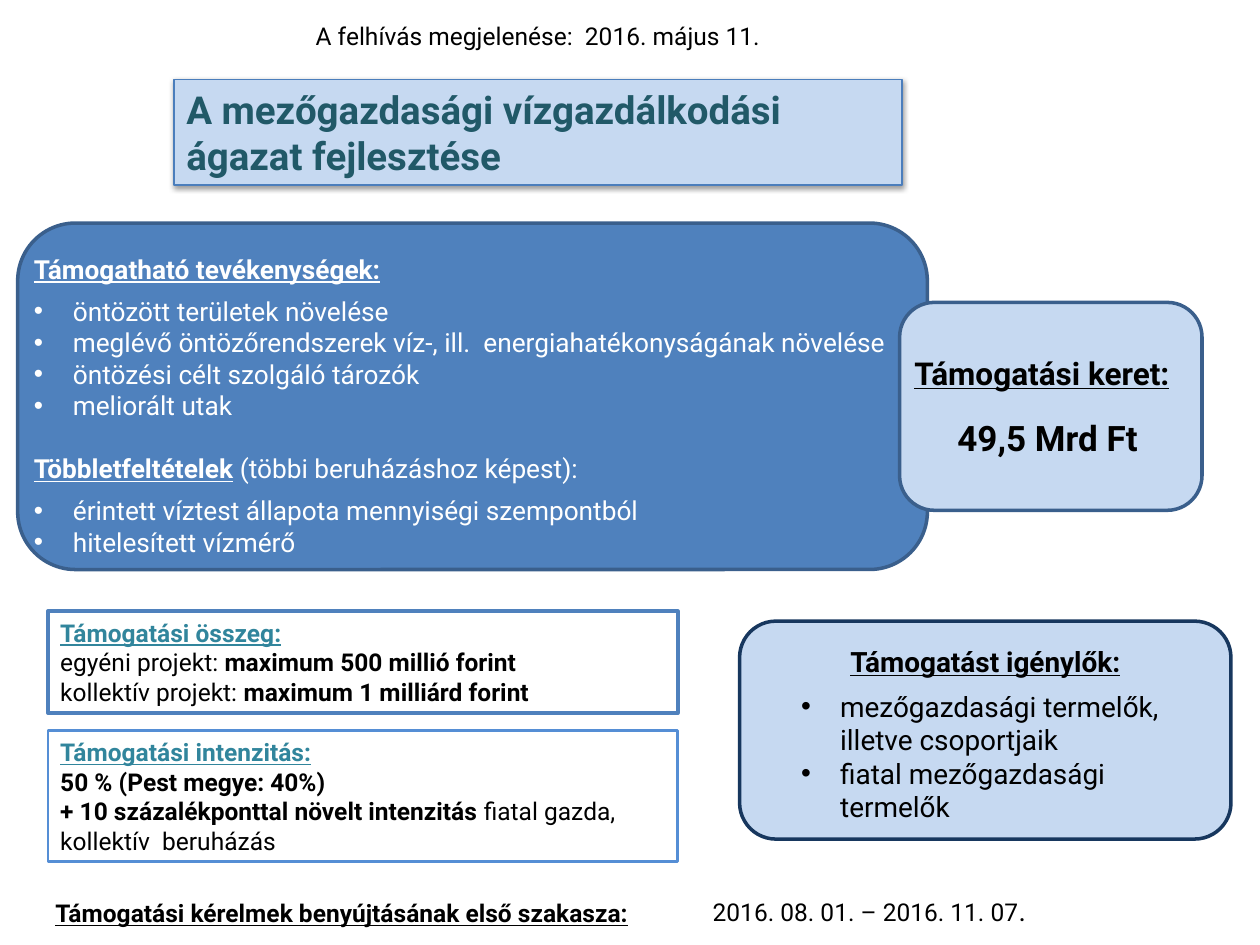
import pptx
import pptx.dml.color
import pptx.enum.shapes
import pptx.enum.text
import pptx.oxml
import pptx.oxml.ns
import pptx.util
from pptx.util import Inches

ALIGN = pptx.enum.text.PP_ALIGN
SHAPE = pptx.enum.shapes.MSO_SHAPE
FONT = "Roboto"
BLACK, WHITE = "000000", "FFFFFF"
BLUE, PALE, TEAL, EDGE = "4F81BD", "C6D9F1", "31859C", "3A5F8C"
HEADING, BOLD, PLAIN = "bu", "b", ""  # b = bold, u = underlined


def rgb(value):
    return pptx.dml.color.RGBColor.from_string(value)


def add_xml(parent, tag, attributes, content=""):
    namespace = pptx.oxml.ns.nsdecls("a")
    parent.append(pptx.oxml.parse_xml(
        f"<a:{tag} {namespace} {attributes}>{content}</a:{tag}>"))


def para(*spans, bullet=False, before=0, align=ALIGN.LEFT, spacing=None):
    """Describe a paragraph; each span is (text, style) or (text, style, colour)."""
    return dict(spans=spans, bullet=bullet, before=before, align=align, spacing=spacing)


def bullets(*lines, align=ALIGN.LEFT):
    return [para((line, PLAIN), bullet=True, before=0 if i else 6, align=align)
            for i, line in enumerate(lines)]


def write(box, paras, size, color=BLACK, wrap=True):
    frame = box.text_frame
    frame.word_wrap = wrap
    frame.auto_size = pptx.enum.text.MSO_AUTO_SIZE.SHAPE_TO_FIT_TEXT
    for i, item in enumerate(paras):
        paragraph = frame.add_paragraph() if i else frame.paragraphs[0]
        if item["bullet"]:
            properties = paragraph._p.get_or_add_pPr()
            properties.set("marL", str(Inches(0.31)))
            properties.set("indent", str(-Inches(0.31)))
            add_xml(properties, "buFont", 'typeface="Arial"')
            add_xml(properties, "buChar", 'char="•"')
        paragraph.alignment = item["align"]
        if item["before"]:
            paragraph.space_before = pptx.util.Pt(item["before"])
        if item["spacing"]:
            paragraph.line_spacing = item["spacing"]
        for text, style, *own_color in item["spans"]:
            span = paragraph.add_run()
            span.text = text
            span.font.name = FONT
            span.font.size = pptx.util.Pt(size)
            span.font.bold = "b" in style
            span.font.underline = "u" in style
            span.font.color.rgb = rgb(own_color[0] if own_color else color)


def add_text(page, at, paras, size, color=BLACK, wrap=True):
    box = page.shapes.add_textbox(*map(Inches, at))
    write(box, paras, size, color, wrap)
    return box


def add_panel(page, kind, at, fill, line, width=2):
    panel = page.shapes.add_shape(kind, *map(Inches, at))
    panel.shadow.inherit = False
    if fill:
        panel.fill.solid()
        panel.fill.fore_color.rgb = rgb(fill)
    else:
        panel.fill.background()
    panel.line.color.rgb = rgb(line)
    panel.line.width = pptx.util.Pt(width)
    return panel


def add_title(page):
    title = add_panel(page, SHAPE.RECTANGLE, (1.38, 0.63, 5.78, 0.84), PALE, "4B7EBC", 0.75)
    effects = title._element.spPr.find(pptx.oxml.ns.qn("a:effectLst"))
    add_xml(effects, "outerShdw",
            f'blurRad="{pptx.util.Pt(3.1)}" dist="{pptx.util.Pt(1.6)}" '
            'dir="5400000" rotWithShape="0"',
            '<a:srgbClr val="000000"><a:alpha val="38000"/></a:srgbClr>')
    write(title, [para(("A mezőgazdasági vízgazdálkodási ágazat fejlesztése", BOLD))],
          22, "215968")


def add_activities(page):
    add_panel(page, SHAPE.ROUNDED_RECTANGLE, (0.14, 1.77, 7.22, 2.75), BLUE, EDGE)
    justify = ALIGN.JUSTIFY
    add_text(page, (0.17, 1.96, 7.19, 2.54), [
        para(("Támogatható tevékenységek:", HEADING), align=justify),
        *bullets("öntözött területek növelése",
                 "meglévő öntözőrendszerek víz-, ill.  energiahatékonyságának növelése",
                 "öntözési célt szolgáló tározók",
                 "meliorált utak"),
        para(("Többletfeltételek", HEADING), (" (többi beruházáshoz képest):", PLAIN),
             before=18, align=justify),
        *bullets("érintett víztest állapota mennyiségi szempontból",
                 "hitelesített vízmérő", align=justify),
    ], 15, WHITE)


def add_amounts(page):
    total = add_panel(page, SHAPE.RECTANGLE, (0.38, 4.85, 5, 0.81), WHITE, BLUE)
    write(total, [
        para(("Támogatási összeg:", HEADING, TEAL)),
        para(("egyéni projekt: ", PLAIN), ("maximum 500 millió forint", BOLD)),
        para(("kollektív projekt: ", PLAIN), ("maximum 1 milliárd forint", BOLD)),
    ], 14)
    intensity = add_panel(page, SHAPE.RECTANGLE, (0.38, 5.8, 5, 1.04), None, "558ED5", 1.5)
    write(intensity, [
        para(("Támogatási intenzitás:", HEADING, TEAL)),
        para(("50 % (Pest megye: 40%)", BOLD)),
        para(("+ 10 százalékponttal növelt intenzitás ", BOLD),
             ("fiatal gazda, kollektív  beruházás", PLAIN)),
    ], 14)


def add_budget(page):
    add_panel(page, SHAPE.ROUNDED_RECTANGLE, (7.14, 2.4, 2.4, 1.65), PALE, EDGE)
    add_text(page, (7.16, 2.76, 2.36, 0.4), [para(("Támogatási keret:", HEADING))],
             18, wrap=False)
    add_text(page, (7.5, 3.26, 1.68, 0.44), [para(("49,5 Mrd Ft", BOLD))], 20, wrap=False)


def add_applicants(page):
    add_panel(page, SHAPE.ROUNDED_RECTANGLE, (5.87, 4.93, 3.9, 1.73), PALE, "17375E")
    add_text(page, (6.26, 5.07, 3.12, 1.53), [
        para(("Támogatást igénylők:", HEADING), align=ALIGN.CENTER),
        *bullets("mezőgazdasági termelők, illetve csoportjaik",
                 "fiatal mezőgazdasági termelők"),
    ], 16)


def add_deadline(page):
    add_text(page, (0.34, 7.08, 6.05, 0.34),
             [para(("Támogatási kérelmek benyújtásának első szakasza:", HEADING))], 14)
    period = add_text(page, (5.55, 7.04, 2.7, 0.37), [
        para(("2016. 08. 01. – 2016. 11. 07", PLAIN), (".", PLAIN), align=ALIGN.CENTER),
    ], 14, wrap=False)
    period.text_frame.paragraphs[0].runs[-1].font.size = pptx.util.Pt(16)


def main():
    deck = pptx.Presentation()
    deck.slide_width, deck.slide_height = Inches(10), Inches(7.5)
    page = deck.slides.add_slide(deck.slide_layouts[6])
    add_text(page, (2.13, 0, 4.28, 0.45),
             [para(("A felhívás megjelenése:  2016. május 11.", PLAIN),
                   align=ALIGN.CENTER, spacing=1.5)], 14)
    add_title(page)
    add_activities(page)
    add_amounts(page)
    add_budget(page)
    add_applicants(page)
    add_deadline(page)
    deck.save("out.pptx")


if __name__ == "__main__":
    main()
